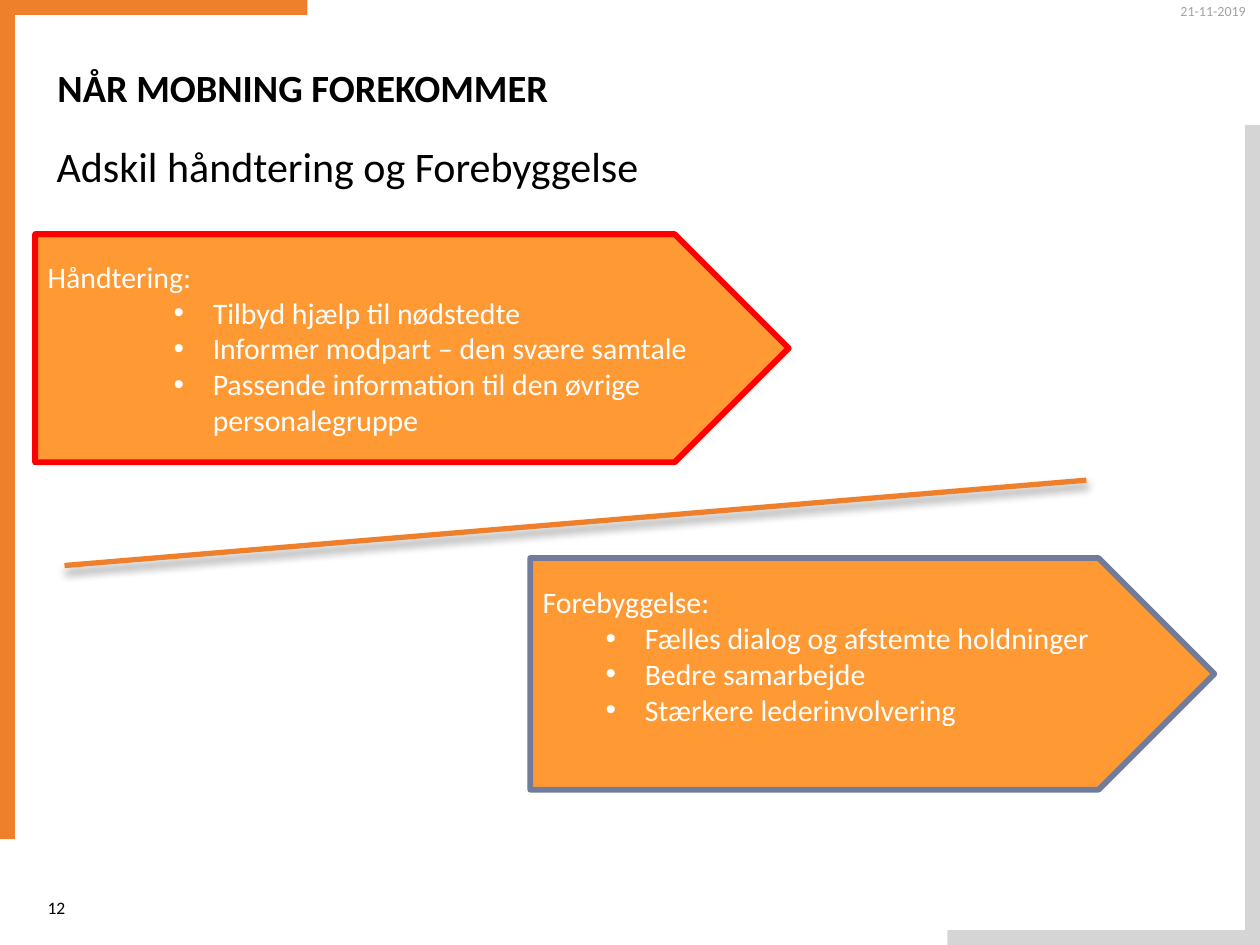
"""Build the slide on separating handling and prevention of bullying."""
from lxml import etree
from pptx import Presentation
from pptx import util as u
from pptx.dml.color import RGBColor
from pptx.enum import shapes, text
from pptx.oxml import ns

FONT = "Calibri"
BLACK = RGBColor(0x00, 0x00, 0x00)
WHITE = RGBColor(0xFF, 0xFF, 0xFF)
GRAY = RGBColor(0xD5, 0xD5, 0xD5)
DIM = RGBColor(0xA2, 0xA2, 0xA2)
ORANGE = RGBColor(0xEE, 0x80, 0x2C)
AMBER = RGBColor(0xFF, 0x99, 0x33)
RED = RGBColor(0xFF, 0x00, 0x00)
SLATE = RGBColor(0x70, 0x7C, 0x99)

WIDE, HIGH, THICK = 25.4, 19.05, 0.3
LEFT, MID = text.PP_ALIGN.LEFT, text.MSO_ANCHOR.MIDDLE
TOP, RIGHT = text.MSO_ANCHOR.TOP, text.PP_ALIGN.RIGHT

BARS = [
    ((WIDE - THICK, 2.52, THICK, HIGH - 2.52), GRAY),
    ((0, 0, THICK, 16.92), ORANGE),
    ((0.2, 0, 6, THICK), ORANGE),
    ((19.1, HIGH - THICK, 6, THICK), GRAY),
]
LABELS = [
    ("NÅR MOBNING FOREKOMMER", (0.91, 1.16, 22.38, 1.19), 22, True, BLACK, LEFT, TOP),
    ("Adskil håndtering og Forebyggelse", (0.89, 2.7, 22.38, 1.3), 24, False, BLACK, LEFT, TOP),
    ("12", (0.71, 17.88, 2.74, 0.84), 10, False, BLACK, LEFT, MID),
    ("21-11-2019", (22.91, -0.08, 2.46, 0.61), 8, False, DIM, RIGHT, TOP),
]
ARROWS = [
    {"head": "Håndtering:", "box": (0.71, 4.72, 15.19, 4.6), "line": RED,
     "indent": 3.33, "foot": 0.13,
     "items": ["Tilbyd hjælp til nødstedte",
               "Informer modpart – den svære samtale",
               "Passende information til den øvrige personalegruppe"]},
    {"head": "Forebyggelse:", "box": (10.69, 11.25, 13.79, 4.67), "line": SLATE,
     "indent": 2.06, "foot": 0.86,
     "items": ["Fælles dialog og afstemte holdninger",
               "Bedre samarbejde",
               "Stærkere lederinvolvering"]},
]
SLOPE = (21.9, 9.68, 1.3, 11.4)


def cm(vals):
    return [u.Cm(v) for v in vals]


def node(root, tag, **attrs):
    return etree.SubElement(root, ns.qn(tag), attrs)


def write(para, words, size, color, bold=False, align=LEFT):
    para.alignment = align
    run = para.add_run()
    run.text = words
    font = run.font
    font.name, font.size, font.bold = FONT, u.Pt(size), bold
    font.color.rgb = color


def block(slide, kind, box, fill):
    shape = slide.shapes.add_shape(kind, *cm(box))
    shape.shadow.inherit = False
    shape.fill.solid()
    shape.fill.fore_color.rgb = fill
    shape.line.fill.background()
    return shape


def label(slide, words, box, size, bold, color, align, anchor):
    frame = slide.shapes.add_textbox(*cm(box)).text_frame
    frame.word_wrap = True
    frame.vertical_anchor = anchor
    write(frame.paragraphs[0], words, size, color, bold, align)


def bullet(para, indent):
    props = para._p.get_or_add_pPr()
    props.set("marL", str(u.Cm(indent)))
    props.set("indent", str(-u.Cm(0.79)))
    node(props, "a:buFont", typeface="Arial")
    node(props, "a:buChar", char="•")


def arrow(slide, data):
    shape = block(slide, shapes.MSO_SHAPE.PENTAGON, data["box"], AMBER)
    shape.line.color.rgb = data["line"]
    shape.line.width = u.Pt(3.35)
    frame = shape.text_frame
    frame.word_wrap = True
    frame.vertical_anchor = MID
    frame.margin_bottom = u.Cm(data["foot"])
    write(frame.paragraphs[0], data["head"], 17, WHITE)
    for item in data["items"]:
        para = frame.add_paragraph()
        bullet(para, data["indent"])
        write(para, item, 17, WHITE)


def slope(slide):
    line = slide.shapes.add_connector(shapes.MSO_CONNECTOR.STRAIGHT, *cm(SLOPE))
    line.line.color.rgb = ORANGE
    line.line.width = u.Pt(3)
    effects = node(line._element.spPr, "a:effectLst")
    shade = node(effects, "a:outerShdw", blurRad=str(u.Pt(5.2)),
                 dist=str(u.Pt(3)), dir="5400000", rotWithShape="0")
    color = node(shade, "a:srgbClr", val=str(BLACK))
    node(color, "a:alpha", val="40000")


def main():
    deck = Presentation()
    deck.slide_width, deck.slide_height = cm((WIDE, HIGH))
    slide = deck.slides.add_slide(deck.slide_layouts[6])
    for box, fill in BARS:
        block(slide, shapes.MSO_SHAPE.RECTANGLE, box, fill)
    for row in LABELS:
        label(slide, *row)
    for data in ARROWS:
        arrow(slide, data)
    slope(slide)
    deck.save("out.pptx")


if __name__ == "__main__":
    main()
